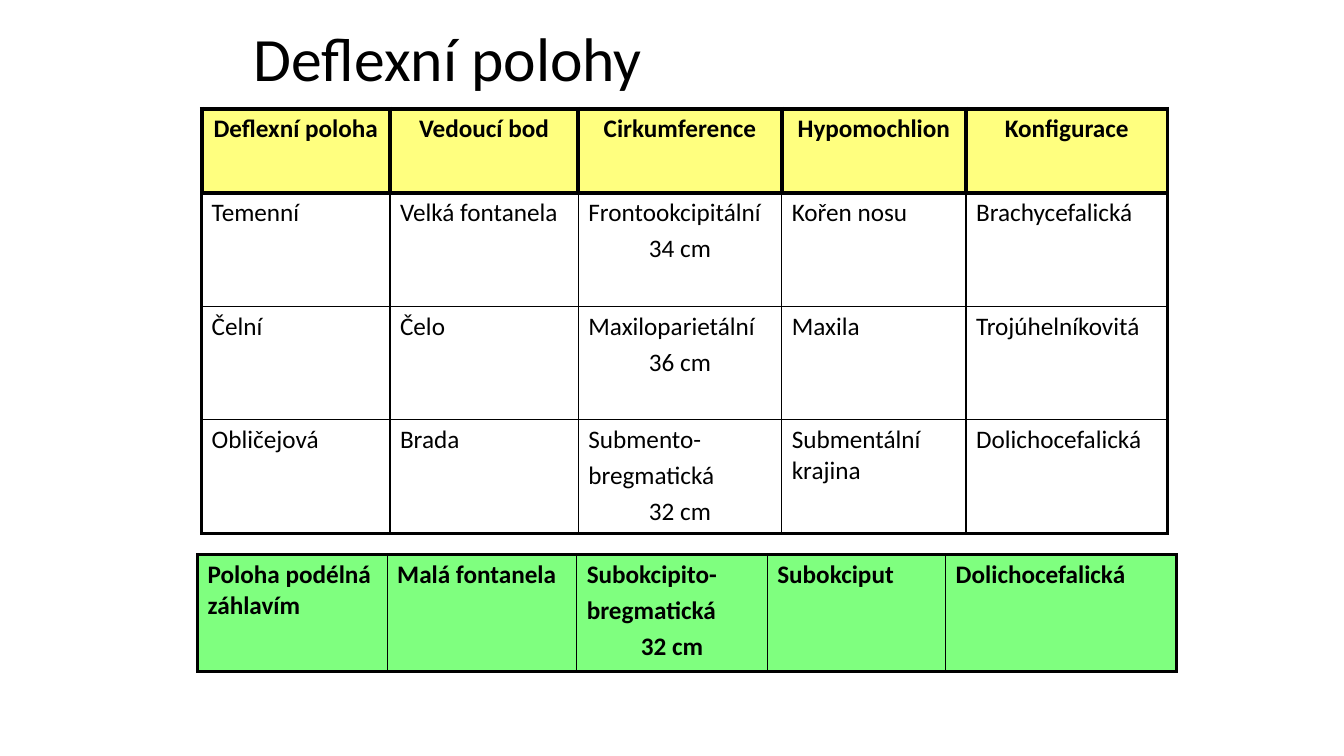
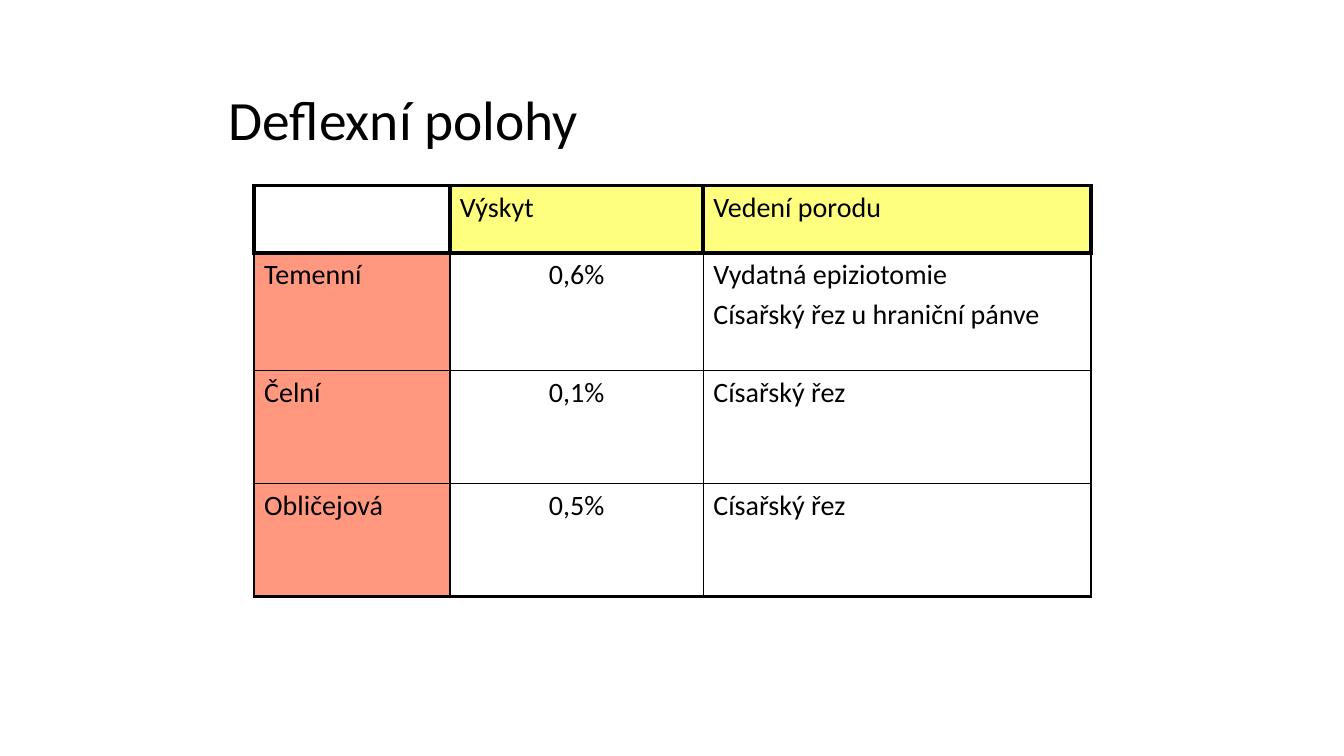
from collections import namedtuple

from lxml.etree import SubElement
from pptx import Presentation
from pptx.dml.color import RGBColor
from pptx.enum.text import MSO_ANCHOR as Anchor, PP_ALIGN as Align
from pptx.oxml.ns import qn
from pptx.util import Inches, Pt

# Shared style
FONT = "Calibri"
BLACK = RGBColor(0x00, 0x00, 0x00)
YELLOW = RGBColor(0xFF, 0xFF, 0x00)
GREEN = RGBColor(0x00, 0xFF, 0x00)
RED = RGBColor(0xFF, 0x33, 0x00)
FILL_OPACITY = 50
HEADER_LINE, OUTER_LINE, INNER_LINE = 3, 2.25, 1
MEASURES = ("cm", "%")
TITLE = "Deflexní polohy"

Box = namedtuple("Box", "left top width height")

# Table texts; a cell's lines are separate paragraphs
POSITIONS = [
    ["Deflexní poloha", "Vedoucí bod", "Cirkumference", "Hypomochlion", "Konfigurace"],
    ["Temenní", "Velká fontanela", "Frontookcipitální\n34 cm", "Kořen nosu", "Brachycefalická"],
    ["Čelní", "Čelo", "Maxiloparietální\n36 cm", "Maxila", "Trojúhelníkovitá"],
    ["Obličejová", "Brada", "Submento-\nbregmatická\n32 cm", "Submentální krajina",
     "Dolichocefalická"],
]
COMPARISON = [
    ["Poloha podélná záhlavím", "Malá fontanela", "Subokcipito-\nbregmatická\n32 cm",
     "Subokciput", "Dolichocefalická"],
]
DELIVERY = [
    ["", "Výskyt", "Vedení porodu"],
    ["Temenní", "0,6%", "Vydatná epiziotomie\nCísařský řez u hraniční pánve"],
    ["Čelní", "0,1%", "Císařský řez"],
    ["Obličejová", "0,5%", "Císařský řez"],
]


def style_font(font, size, bold=False):
    font.name, font.size, font.bold = FONT, Pt(size), bold
    font.color.rgb = BLACK


def add_title(slide, box, size):
    frame = slide.shapes.add_textbox(*map(Inches, box)).text_frame
    frame.word_wrap = True
    frame.vertical_anchor = Anchor.MIDDLE
    paragraph = frame.paragraphs[0]
    paragraph.text = TITLE
    paragraph.line_spacing = 0.9
    style_font(paragraph.font, size)


def set_borders(cell, widths):
    """Draw the left, right, top and bottom borders, widths in points."""
    properties = cell._tc.get_or_add_tcPr()
    for side, width in zip("LRTB", widths):
        line = SubElement(properties, qn(f"a:ln{side}"), w=str(Pt(width)))
        fill = SubElement(line, qn("a:solidFill"))
        SubElement(fill, qn("a:srgbClr"), val=str(BLACK))


def set_fill(cell, color):
    if color is None:
        cell.fill.background()
        return
    cell.fill.solid()
    cell.fill.fore_color.rgb = color
    color_node = cell._tc.tcPr.find(qn("a:solidFill"))[0]
    SubElement(color_node, qn("a:alpha"), val=str(FILL_OPACITY * 1000))


def write_cell(cell, text, size, bold, centered):
    cell.text = text
    for index, paragraph in enumerate(cell.text_frame.paragraphs):
        style_font(paragraph.font, size, bold)
        is_measure = paragraph.text.endswith(MEASURES)
        paragraph.alignment = Align.CENTER if centered or is_measure else Align.LEFT
        if index:
            paragraph.space_before = Pt(size * 0.2)


def border_widths(row, column, row_count, column_count, has_header):
    """Heavy lines round header cells, medium outside, thin inside."""
    if has_header and row == 0:
        return [HEADER_LINE] * 4

    def edge(is_outer):
        return OUTER_LINE if is_outer else INNER_LINE

    top = HEADER_LINE if has_header and row == 1 else edge(row == 0)
    return [edge(column == 0), edge(column == column_count - 1), top,
            edge(row == row_count - 1)]


def add_grid(slide, box, rows, column_shares, row_shares, size, fill_of,
             has_header=True, bold_rows=0, center_header=False):
    """Fill the box with a table; fill_of(row, column) gives each cell's colour."""
    row_count, column_count = len(rows), len(column_shares)
    table = slide.shapes.add_table(row_count, column_count, *map(Inches, box)).table
    table.first_row = table.horz_banding = False
    for column, share in zip(table.columns, column_shares):
        column.width = Inches(box.width * share / sum(column_shares))
    for row, share in zip(table.rows, row_shares):
        row.height = Inches(box.height * share / sum(row_shares))
    for r, texts in enumerate(rows):
        for c, text in enumerate(texts):
            cell = table.cell(r, c)
            set_borders(cell, border_widths(r, c, row_count, column_count, has_header))
            set_fill(cell, fill_of(r, c))
            write_cell(cell, text, size, r < bold_rows, center_header and r == 0)


def delivery_fill(row, column):
    if row == 0:
        return YELLOW if column else None
    return None if column else RED


def build_positions_slide(slide):
    add_title(slide, Box(2.42, 0.2, 8.5, 0.83), 44)
    # Deflexed positions
    add_grid(slide, Box(2, 1.08, 9.58, 4.21), POSITIONS,
             [1.87, 1.87, 2.02, 1.83, 2], [0.83, 1.12, 1.12, 1.12], 18,
             lambda row, column: None if row else YELLOW,
             bold_rows=1, center_header=True)
    # Normal position for comparison
    add_grid(slide, Box(1.96, 5.5, 9.71, 1.16), COMPARISON,
             [1.88, 1.88, 1.89, 1.77, 2.29], [1], 18,
             lambda row, column: GREEN, has_header=False, bold_rows=1)


def build_delivery_slide(slide):
    add_title(slide, Box(2.17, 0.89, 9, 0.66), 39.6)
    # Incidence and management
    add_grid(slide, Box(2.52, 1.84, 8.3, 4.08), DELIVERY,
             [1.94, 2.51, 3.84], [0.67, 1.16, 1.12, 1.12], 20, delivery_fill)


def main():
    presentation = Presentation()
    presentation.slide_width, presentation.slide_height = Inches(13.33), Inches(7.5)
    blank = presentation.slide_layouts[6]
    for build in (build_positions_slide, build_delivery_slide):
        build(presentation.slides.add_slide(blank))
    presentation.save("out.pptx")


if __name__ == "__main__":
    main()
